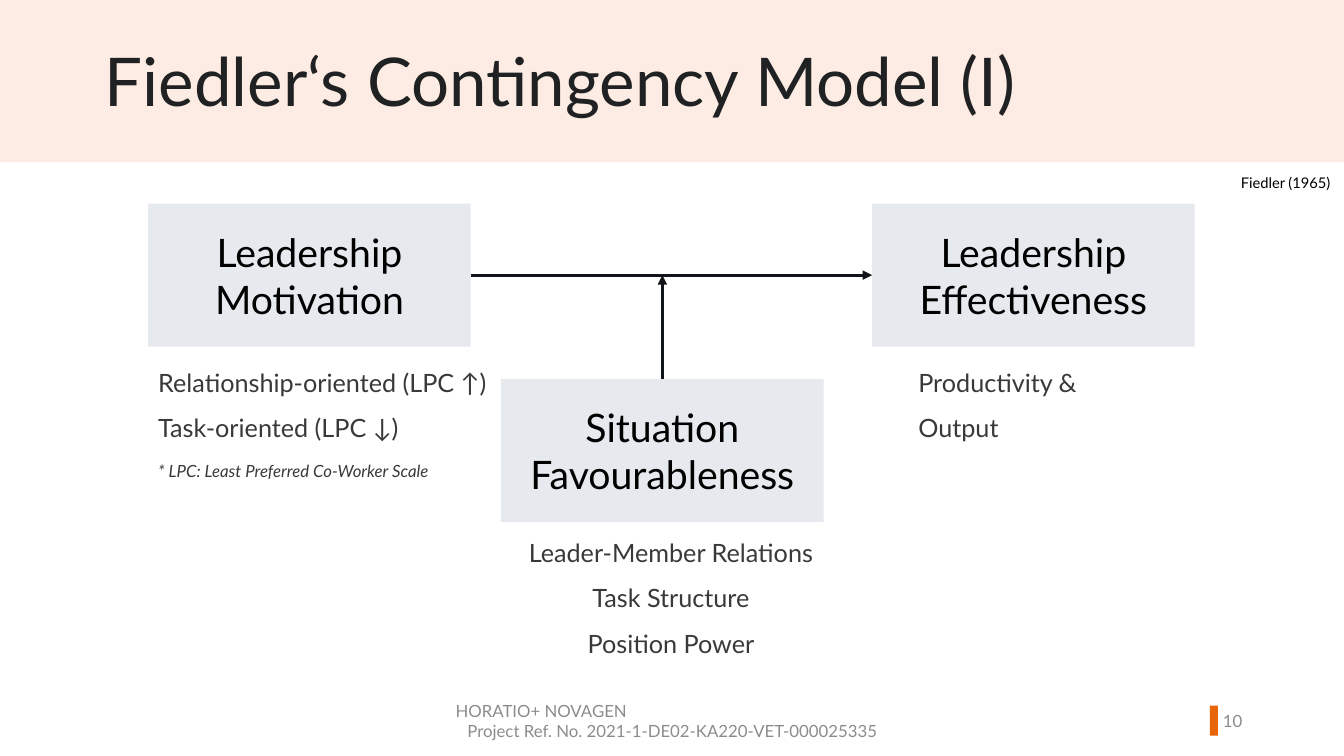
from dataclasses import dataclass
from lxml.etree import SubElement
from pptx import Presentation
from pptx.dml.color import RGBColor
from pptx.enum.shapes import MSO_CONNECTOR, MSO_SHAPE
from pptx.enum.text import MSO_ANCHOR, PP_ALIGN
from pptx.oxml.ns import qn
from pptx.util import Inches, Pt


@dataclass(frozen=True)
class Theme:
    face: str = "Lato"
    band: str = "FDECE3"
    mark: str = "E86507"
    box: str = "E6E9EE"
    line: str = "11151B"
    head: str = "202122"
    dark: str = "000000"
    body: str = "3B3838"
    pale: str = "8C8C8C"
    huge: float = 48
    big: float = 28
    mid: float = 18
    low: float = 12
    tiny: float = 10.5


THEME = Theme()
WIDE, HIGH = Inches(13.33), Inches(7.5)
LEFT, MID, RIGHT = PP_ALIGN.LEFT, PP_ALIGN.CENTER, PP_ALIGN.RIGHT
TOP, CORE = MSO_ANCHOR.TOP, MSO_ANCHOR.MIDDLE

# Places are left, top, width and height as percent of the slide.
TITLE = "Fiedler‘s Contingency Model (I)"
TITLE_AT = (7.05, 5.6, 74.5, 11.33)
BAND_AT = (0, 0, 100, 21.47)
MARK_AT = (90.02, 93.33, 0.6, 4)
BOX_SIZE = (24, 18.93)
BOXES = {
    "cause": ("Leadership Motivation", 11.03, 26.93),
    "effect": ("Leadership Effectiveness", 64.89, 26.93),
    "factor": ("Situation Favourableness", 37.28, 50.13),
}

BODY = {"size": THEME.mid, "tone": THEME.body, "gap": 1.5}
SMALL = {"size": THEME.low, "tone": THEME.pale}
NOTES = [
    ((67.59, 45.87, 18.68, 6.93), TOP, [("Productivity &\vOutput", BODY)]),
    ((91.6, 22.4, 8.4, 3.87), TOP,
     [("Fiedler (1965)", {"size": THEME.tiny, "tone": THEME.dark})]),
    ((11.03, 45.87, 27.53, 18.93), TOP, [
        ("Relationship-oriented (LPC ↑)", BODY),
        ("Task-oriented (LPC ↓)", BODY | {"after": 6}),
        ("* LPC: Least Preferred Co-Worker Scale",
         BODY | {"size": THEME.low, "after": 6, "slant": True}),
    ]),
    ((38.41, 68.4, 23.03, 19.07), TOP, [
        (line, BODY | {"align": MID})
        for line in ("Leader-Member Relations", "Task Structure", "Position Power")
    ]),
    ((33.16, 92.67, 33.76, 5.33), CORE, [
        ("HORATIO+ NOVAGEN", SMALL),
        ("Project Ref. No. 2021-1-DE02-KA220-VET-000025335", SMALL | {"align": MID}),
    ]),
    ((88.3, 92.67, 4.88, 5.33), CORE, [("10", SMALL | {"align": RIGHT})]),
]


def place(at):
    x, y, w, h = at
    return [int(n) for n in (WIDE * x / 100, HIGH * y / 100, WIDE * w / 100, HIGH * h / 100)]


def style(par, size, tone, align=LEFT, gap=None, after=None, slant=None):
    par.alignment = align
    if gap:
        par.line_spacing = gap
    if after:
        par.space_after = Pt(after)
    par.font.name = THEME.face
    par.font.size = Pt(size)
    par.font.italic = slant
    par.font.color.rgb = RGBColor.from_string(tone)


def write(frame, lines, anchor):
    frame.word_wrap = True
    frame.vertical_anchor = anchor
    for i, (text, look) in enumerate(lines):
        par = frame.add_paragraph() if i else frame.paragraphs[0]
        par.text = text
        style(par, **look)


def block(slide, at, tone):
    shape = slide.shapes.add_shape(MSO_SHAPE.RECTANGLE, *place(at))
    shape.shadow.inherit = False
    shape.fill.solid()
    shape.fill.fore_color.rgb = RGBColor.from_string(tone)
    shape.line.fill.background()
    return shape


def arrow(slide, start, out, end, into=None):
    line = slide.shapes.add_connector(MSO_CONNECTOR.STRAIGHT, 0, 0, 0, 0)
    line.begin_connect(start, out)
    if into is None:
        line.end_x, line.end_y = line.begin_x, end.top + end.height // 2
    else:
        line.end_connect(end, into)
    line.line.width = Pt(2.25)
    line.line.color.rgb = RGBColor.from_string(THEME.line)
    props = line.element.spPr
    SubElement(props.find(qn("a:ln")), qn("a:tailEnd"), type="triangle")
    SubElement(props, qn("a:effectLst"))


def main():
    deck = Presentation()
    deck.slide_width, deck.slide_height = WIDE, HIGH
    slide = deck.slides.add_slide(deck.slide_layouts[5])

    title = slide.shapes.title
    title.left, title.top, title.width, title.height = place(TITLE_AT)
    write(title.text_frame,
          [(TITLE, {"size": THEME.huge, "tone": THEME.head, "gap": 0.9})], CORE)
    for at, tone in ((BAND_AT, THEME.band), (MARK_AT, THEME.mark)):
        title.element.addprevious(block(slide, at, tone).element)

    boxes = {}
    for key, (text, x, y) in BOXES.items():
        boxes[key] = block(slide, (x, y, *BOX_SIZE), THEME.box)
        look = {"size": THEME.big, "tone": THEME.dark, "align": MID}
        write(boxes[key].text_frame, [(text, look)], CORE)
    arrow(slide, boxes["cause"], 3, boxes["effect"], 1)
    arrow(slide, boxes["factor"], 0, boxes["cause"])

    for at, anchor, lines in NOTES:
        write(slide.shapes.add_textbox(*place(at)).text_frame, lines, anchor)
    deck.save("out.pptx")


if __name__ == "__main__":
    main()
